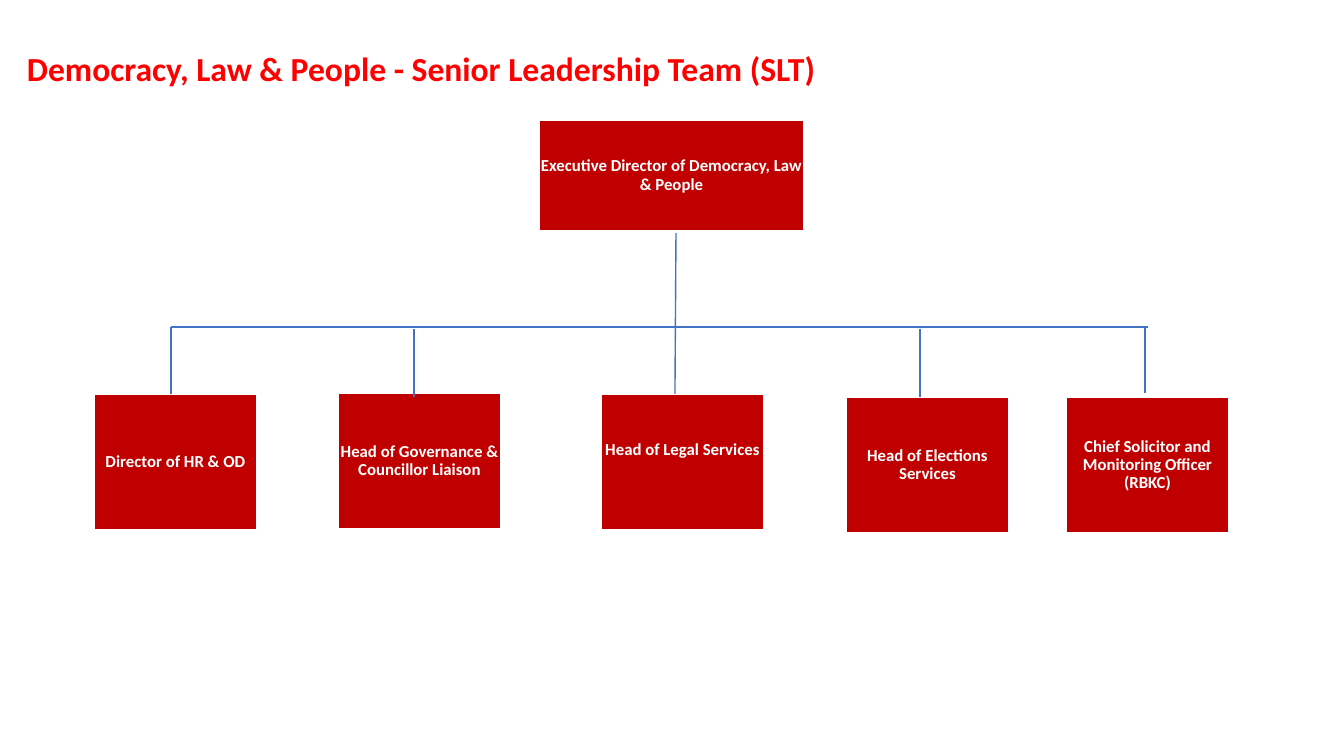
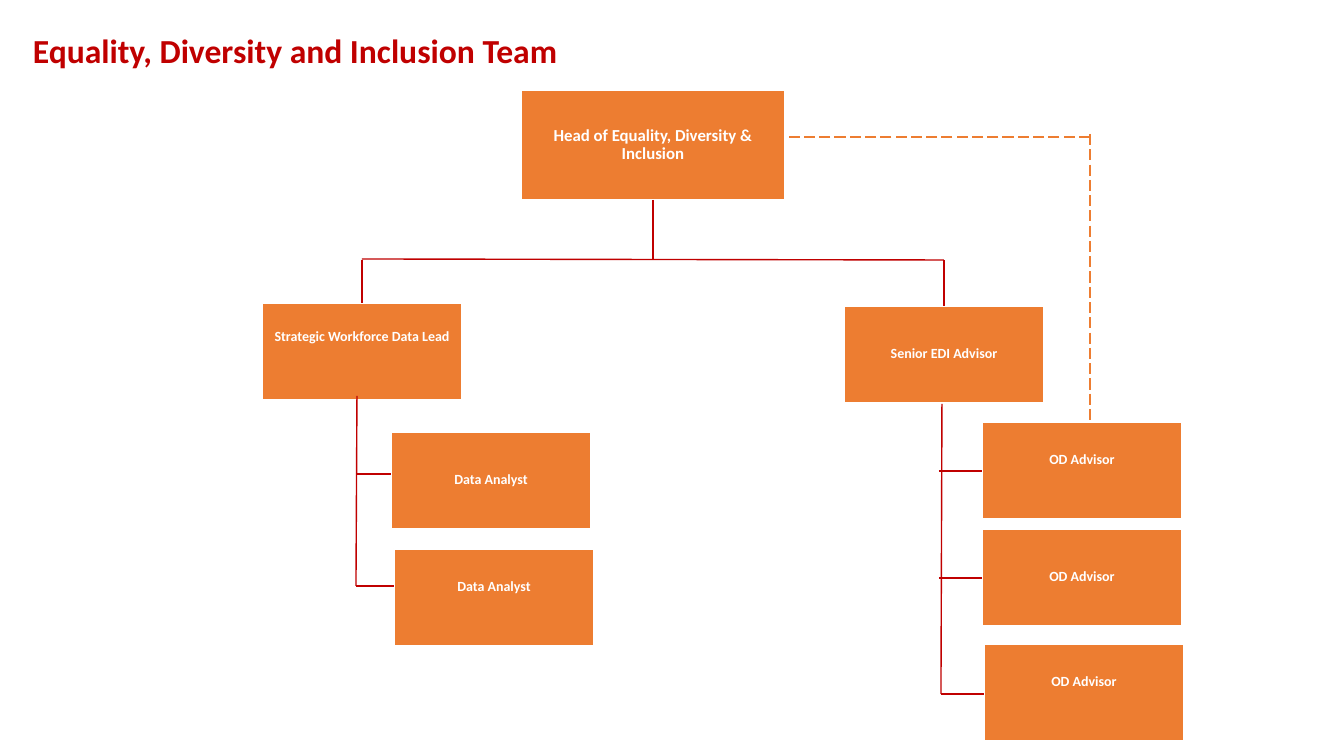
from pptx import Presentation
from pptx import util as u
from pptx.dml.color import RGBColor
from pptx.enum import dml, shapes, text
from pptx.oxml.ns import qn
from lxml import etree

EMU_PER_PX = 914400 / 100.8
FONT = "Calibri"
WHITE = "FFFFFF"
RED = "C00000"
BRIGHT_RED = "FF0000"
ORANGE = "ED7D31"
BLUE = "4472C4"


def px(length):
    return u.Emu(round(length * EMU_PER_PX))


def color(value):
    return RGBColor.from_string(value)


def write_text(frame, wording, size, ink, alignment):
    frame.word_wrap = True
    frame.vertical_anchor = text.MSO_ANCHOR.MIDDLE
    paragraph = frame.paragraphs[0]
    paragraph.alignment = alignment
    paragraph.line_spacing = 0.9
    run = paragraph.add_run()
    run.text = wording
    run.font.name = FONT
    run.font.size = u.Pt(size)
    run.font.bold = True
    run.font.color.rgb = color(ink)


def add_title(slide, box, wording, ink):
    shape = slide.shapes.add_textbox(*map(px, box))
    write_text(shape.text_frame, wording, 24, ink, text.PP_ALIGN.LEFT)


def add_post(slide, box, wording, fill, size, lift=0):
    shape = slide.shapes.add_shape(shapes.MSO_SHAPE.RECTANGLE, *map(px, box))
    shape.shadow.inherit = False
    shape.fill.solid()
    shape.fill.fore_color.rgb = color(fill)
    shape.line.color.rgb = color(WHITE)
    shape.line.width = u.Pt(1)
    frame = shape.text_frame
    frame.margin_left = frame.margin_right = frame.margin_top = px(1)
    frame.margin_bottom = px(1 + 2 * lift)
    write_text(frame, wording, size, WHITE, text.PP_ALIGN.CENTER)


def add_line(slide, start, end, ink, dashed=False):
    line = slide.shapes.add_connector(
        shapes.MSO_CONNECTOR.STRAIGHT, *map(px, (*start, *end)))
    line.line.color.rgb = color(ink)
    line.line.width = u.Pt(1)
    if dashed:
        line.line.dash_style = dml.MSO_LINE.LONG_DASH
    etree.SubElement(line._element.spPr, qn("a:effectLst"))


def add_leadership_chart(slide, left, top):
    add_post(slide, (left + 445, top, 265, 111),
             "Executive Director of Democracy, Law & People", RED, 12)
    posts = [
        (0, 274, "Director of HR & OD", 0),
        (244, 273, "Head of Governance & Councillor Liaison", 0),
        (507, 274, "Head of Legal Services", 12),
        (752, 277, "Head of Elections Services", 0),
        (972, 277, "Chief Solicitor and Monitoring Officer (RBKC)", 0),
    ]
    for x, y, wording, lift in posts:
        add_post(slide, (left + x, top + y, 163, 136), wording, RED, 12, lift)

    bar = top + 207
    add_line(slide, (left + 582, top + 113), (left + 581, top + 274), BLUE)
    add_line(slide, (left + 77, bar), (left + 1054, bar), BLUE)
    for x, y, end in [(77, 0, 67), (320, 2, 70), (826, 2, 70), (1051, 0, 66)]:
        add_line(slide, (left + x, bar + y), (left + x, bar + end), BLUE)


def add_reports(slide, left, top, trunk_height, overhang, reports):
    add_line(slide, (left + 1, top), (left, top + trunk_height), RED)
    for x, y, wording, lift, branch in reports:
        add_post(slide, (left + x, top + y, 200, 97), wording, ORANGE, 10, lift)
        start = left if branch == trunk_height else left - overhang
        add_line(slide, (start, top + branch), (left + x, top + branch), RED)


def add_team_chart(slide, left, top):
    add_post(slide, (left + 259, top, 264, 110),
             "Head of Equality, Diversity & Inclusion", ORANGE, 12)
    add_post(slide, (left, top + 213, 200, 97),
             "Strategic Workforce Data Lead", ORANGE, 10, 14)
    add_post(slide, (left + 582, top + 216, 200, 97),
             "Senior EDI Advisor", ORANGE, 10)

    bar = top + 170
    add_line(slide, (left + 391, top + 110), (left + 391, bar), RED)
    add_line(slide, (left + 100, bar - 1), (left + 682, bar), RED)
    for x, end in [(100, 213), (682, 216)]:
        add_line(slide, (left + x, bar), (left + x, top + end), RED)

    add_reports(slide, left + 94, top + 306, 190, 0, [
        (35, 36, "Data Analyst", 0, 78),
        (38, 153, "Data Analyst", 10, 190),
    ])
    add_reports(slide, left + 679, top + 314, 290, 2, [
        (41, 18, "OD Advisor", 10, 67),
        (41, 125, "OD Advisor", 0, 174),
        (43, 240, "OD Advisor", 10, 290),
    ])
    corner = left + 828
    add_line(slide, (corner, top + 47), (left + 523, top + 47), ORANGE, True)
    add_line(slide, (corner, top + 44), (corner, top + 332), ORANGE, True)


def build_leadership_slide(slide):
    add_title(slide, (17, 13, 1008, 116),
              "Democracy, Law & People - Senior Leadership Team (SLT)", BRIGHT_RED)
    add_leadership_chart(slide, 94, 120)


def build_team_slide(slide):
    add_title(slide, (23, 24, 866, 58),
              "Equality, Diversity and Inclusion Team", RED)
    add_team_chart(slide, 262, 90)


def main():
    presentation = Presentation()
    presentation.slide_width = px(1344)
    presentation.slide_height = px(756)
    blank = presentation.slide_layouts[6]
    for build in (build_leadership_slide, build_team_slide):
        build(presentation.slides.add_slide(blank))
    presentation.save("out.pptx")


if __name__ == "__main__":
    main()
